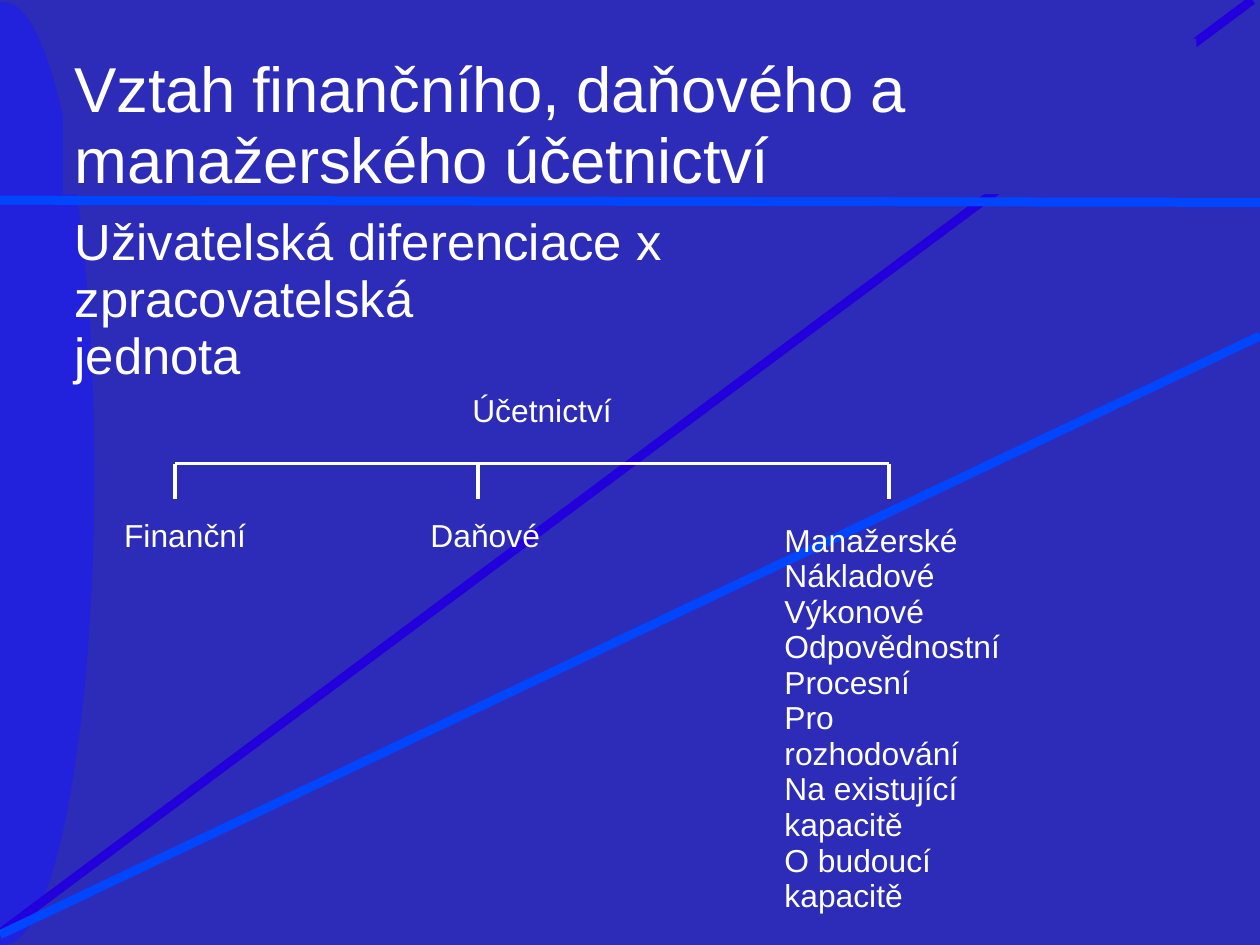
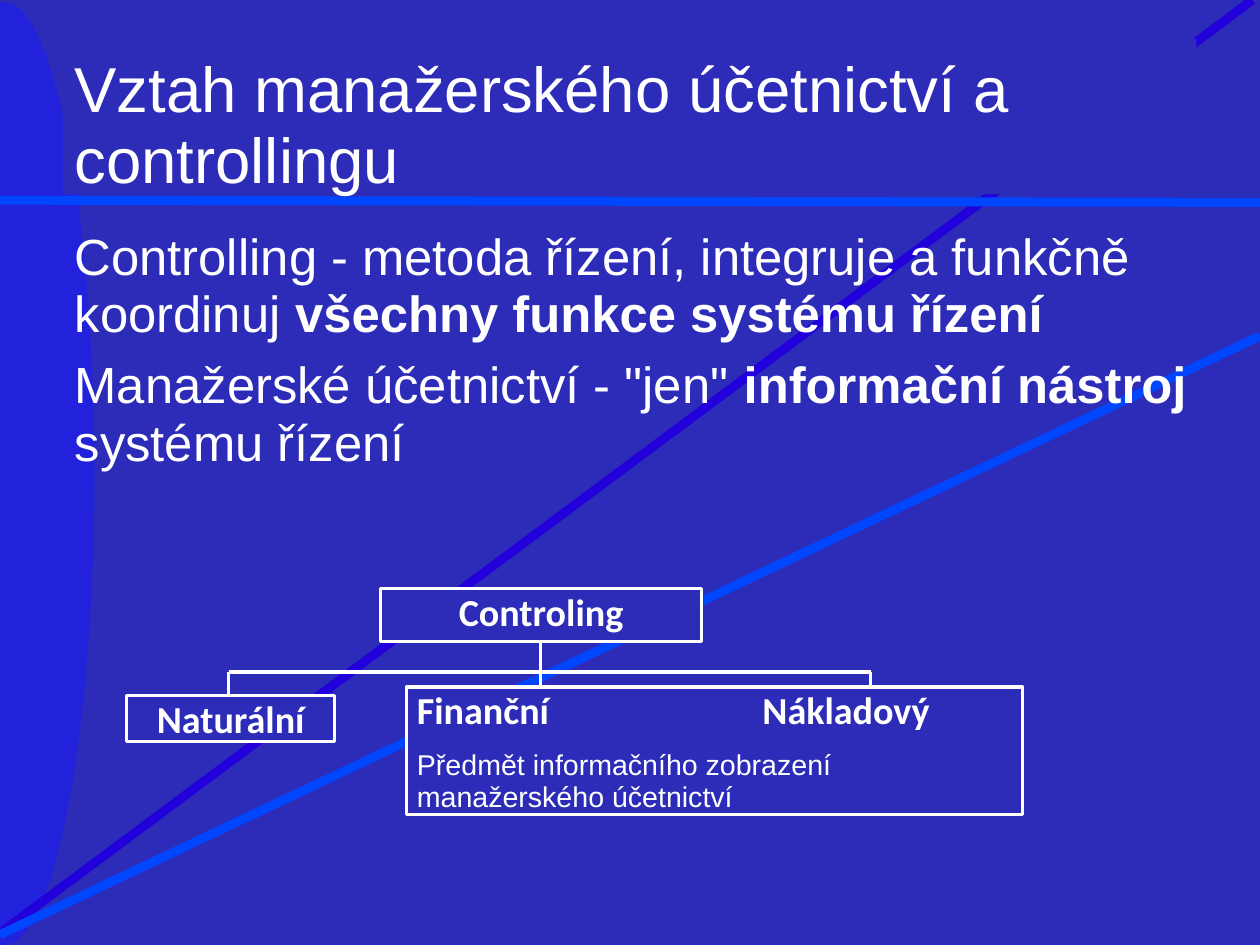
from math import cos, pi, sin

from lxml import etree
from pptx import Presentation
from pptx.dml.color import RGBColor
from pptx.enum.shapes import MSO_CONNECTOR, MSO_SHAPE
from pptx.enum.text import MSO_ANCHOR, MSO_AUTO_SIZE, PP_ALIGN
from pptx.oxml.ns import qn
from pptx.util import Cm, Pt

STRAIGHT = MSO_CONNECTOR.STRAIGHT
RECTANGLE = MSO_SHAPE.RECTANGLE
TOP = MSO_ANCHOR.TOP
NO_AUTOFIT = MSO_AUTO_SIZE.NONE
LEFT, CENTER = PP_ALIGN.LEFT, PP_ALIGN.CENTER

GROUND, DOME, INDIGO = "2C2CB8", "2222DC", "2200DC"
AZURE, WHITE = "0046FF", "FFFFFF"
BODY_FONT, BOX_FONT = "Arial", "Calibri"
WIDTH, HEIGHT = 28.01, 21.01
MARGIN = 1.66
TITLE_ONLY = 5


def rgb(value):
    return RGBColor.from_string(value)


def line(shapes, start, end, color=WHITE, weight=2.25):
    connector = shapes.add_connector(STRAIGHT, *(Cm(v) for v in (*start, *end)))
    connector.line.color.rgb = rgb(color)
    connector.line.width = Pt(weight)
    etree.SubElement(connector.element.spPr, qn("a:effectLst"))
    return connector


def paint(shape, fill, outline=None, weight=2):
    shape.shadow.inherit = False
    shape.fill.solid()
    shape.fill.fore_color.rgb = rgb(fill)
    if outline:
        shape.line.color.rgb = rgb(outline)
        shape.line.width = Pt(weight)
    else:
        shape.line.fill.background()
    return shape


def rectangle(shapes, left, top, width, height, outline=None, weight=2):
    box = shapes.add_shape(RECTANGLE, Cm(left), Cm(top), Cm(width), Cm(height))
    return paint(box, GROUND, outline, weight)


def prepare_frame(frame, inset=0):
    frame.word_wrap = True
    frame.auto_size = NO_AUTOFIT
    frame.vertical_anchor = TOP
    frame.margin_left = Cm(inset)
    frame.margin_right = frame.margin_top = frame.margin_bottom = 0


def write(frame, paragraphs, size, font=BODY_FONT, spacing=None, before=0,
          align=LEFT, first=True, tracking=0):
    """Each paragraph is a list of (text, bold) runs; before skips the first."""
    for index, runs in enumerate(paragraphs):
        starts_frame = first and index == 0
        paragraph = frame.paragraphs[0] if starts_frame else frame.add_paragraph()
        paragraph.alignment = align
        if spacing:
            paragraph.line_spacing = Pt(spacing)
        paragraph.space_before = Pt(before if index else 0)
        for text, bold in runs:
            run = paragraph.add_run()
            run.text = text
            run.font.name = font
            run.font.size = Pt(size)
            run.font.bold = bold
            run.font.color.rgb = rgb(WHITE)
            if tracking:
                run._r.get_or_add_rPr().set("spc", str(tracking))


def plain(*texts):
    return [[(text, False)] for text in texts]


def text_block(slide, left, top, width, height, paragraphs, size, **style):
    block = slide.shapes.add_textbox(Cm(left), Cm(top), Cm(width), Cm(height))
    prepare_frame(block.text_frame)
    write(block.text_frame, paragraphs, size, **style)


def half_dome(shapes):
    center_x, center_y, radius_x, radius_y = 0.1, 10.53, 2, 10.48
    steps = 40
    arc = [(Cm(center_x + radius_x * cos(angle)), Cm(center_y + radius_y * sin(angle)))
           for angle in (pi * (step / steps - 0.5) for step in range(steps + 1))]
    left_edge = [(0, arc[-1][1]), (0, arc[0][1])]
    builder = shapes.build_freeform(*arc[0], scale=1.0)
    builder.add_line_segments(arc[1:] + left_edge, close=True)
    return paint(builder.convert_to_shape(), DOME)


def decorate_layout(layout, slide):
    """Draw the shared backdrop with the slide's shapes and move it to the layout."""
    layout.background.fill.solid()
    layout.background.fill.fore_color.rgb = rgb(GROUND)
    shapes = slide.shapes
    backdrop = [
        half_dome(shapes),
        line(shapes, (27.84, 0), (0, 20.75), INDIGO, 5.67),
        rectangle(shapes, 1.4, 0.86, 25.2, 3.46),
        line(shapes, (WIDTH, 4.5), (0, 4.45), AZURE, 5.67),
        line(shapes, (WIDTH, 7.47), (0, 20.78), AZURE, 5.67),
    ]
    for number, part in enumerate(backdrop, start=100):
        part.element.xpath(".//p:cNvPr")[0].set("id", str(number))
        layout.shapes.element.append(part.element)


def set_title(slide, text, tracking=0):
    title = slide.shapes.title
    title.left, title.top = Cm(MARGIN), Cm(1.19)
    title.width, title.height = Cm(24.8), Cm(3.2)
    prepare_frame(title.text_frame)
    write(title.text_frame, plain(text), 40, spacing=44.9, tracking=tracking)


def branches(slide, bar_y, ends, weight):
    """Draw a bar with one drop per (x, bottom) in ends."""
    line(slide.shapes, (ends[0][0], bar_y), (ends[-1][0], bar_y), weight=weight)
    for x, bottom in ends:
        line(slide.shapes, (x, bar_y), (x, bottom), weight=weight)


def accounting_tree(slide, left, top):
    bar_y = top + 1.62
    branches(slide, bar_y,
             [(left + x, bar_y + 0.79) for x in (1.13, 7.86, 17)], 2.25)
    labels = [("Účetnictví", 7.74, 0), ("Finanční", 0, 2.77), ("Daňové", 6.81, 2.77)]
    for label, x, y in labels:
        text_block(slide, left + x, top + y, 3.5, 0.8, plain(label), 20)
    kinds = plain("Manažerské", "Nákladové", "Výkonové", "Odpovědnostní", "Procesní",
                  "Pro rozhodování", "Na existující kapacitě", "O budoucí kapacitě")
    text_block(slide, left + 14.68, top + 2.94, 4.95, 8.7, kinds, 20, spacing=22.4)


def controlling_tree(slide, left, top):
    shapes = slide.shapes
    bar_y, natural_y, finance_y = top + 1.86, top + 2.39, top + 2.19
    stem_x = left + 9.2
    line(shapes, (stem_x, top + 1.19), (stem_x, bar_y), weight=2)
    branches(slide, bar_y, [(left + 2.26, natural_y), (stem_x, finance_y),
                            (left + 16.54, finance_y)], 2)
    boxes = [("Controling", left + 5.64, top, 7.14, 1.19),
             ("Naturální", left, natural_y, 4.62, 1.02)]
    for label, *place in boxes:
        frame = rectangle(shapes, *place, outline=WHITE).text_frame
        prepare_frame(frame)
        write(frame, [[(label, True)]], 24, BOX_FONT, align=CENTER)

    finance = rectangle(shapes, left + 6.22, finance_y, 13.69, 2.84, WHITE, 2.25)
    frame = finance.text_frame
    prepare_frame(frame, inset=0.23)
    write(frame, [[("Finanční\tNákladový", True)]], 24, BOX_FONT)
    tabs = etree.SubElement(frame.paragraphs[0]._p.get_or_add_pPr(), qn("a:tabLst"))
    etree.SubElement(tabs, qn("a:tab"), pos=str(Cm(7.68)), algn="l")
    write(frame, plain("Předmět informačního zobrazení", "manažerského účetnictví"),
          18, spacing=20.5, first=False)
    frame.paragraphs[1].space_before = Pt(10)


def accounting_slide(slide):
    set_title(slide, "Vztah finančního, daňového a manažerského účetnictví", -20)
    text_block(slide, MARGIN, 4.75, 20, 3.8,
               plain("Uživatelská diferenciace x zpracovatelská", "jednota"),
               32, spacing=35.9)
    accounting_tree(slide, 2.76, 8.69)


def controlling_slide(slide):
    set_title(slide, "Vztah manažerského účetnictví a controllingu")
    statements = [
        [("Controlling - metoda řízení, integruje a funkčně koordinuj ", False),
         ("všechny funkce systému řízení", True)],
        [("Manažerské účetnictví - \"jen\" ", False), ("informační nástroj", True),
         (" systému řízení", False)],
    ]
    text_block(slide, MARGIN, 5.08, 24.9, 5.46, statements, 32, spacing=36, before=9)
    controlling_tree(slide, 2.82, 13.08)


def main():
    deck = Presentation()
    deck.slide_width, deck.slide_height = Cm(WIDTH), Cm(HEIGHT)
    layout = deck.slide_layouts[TITLE_ONLY]
    accounting, controlling = (deck.slides.add_slide(layout) for _ in range(2))
    decorate_layout(layout, accounting)
    accounting_slide(accounting)
    controlling_slide(controlling)
    deck.save("out.pptx")


if __name__ == "__main__":
    main()
